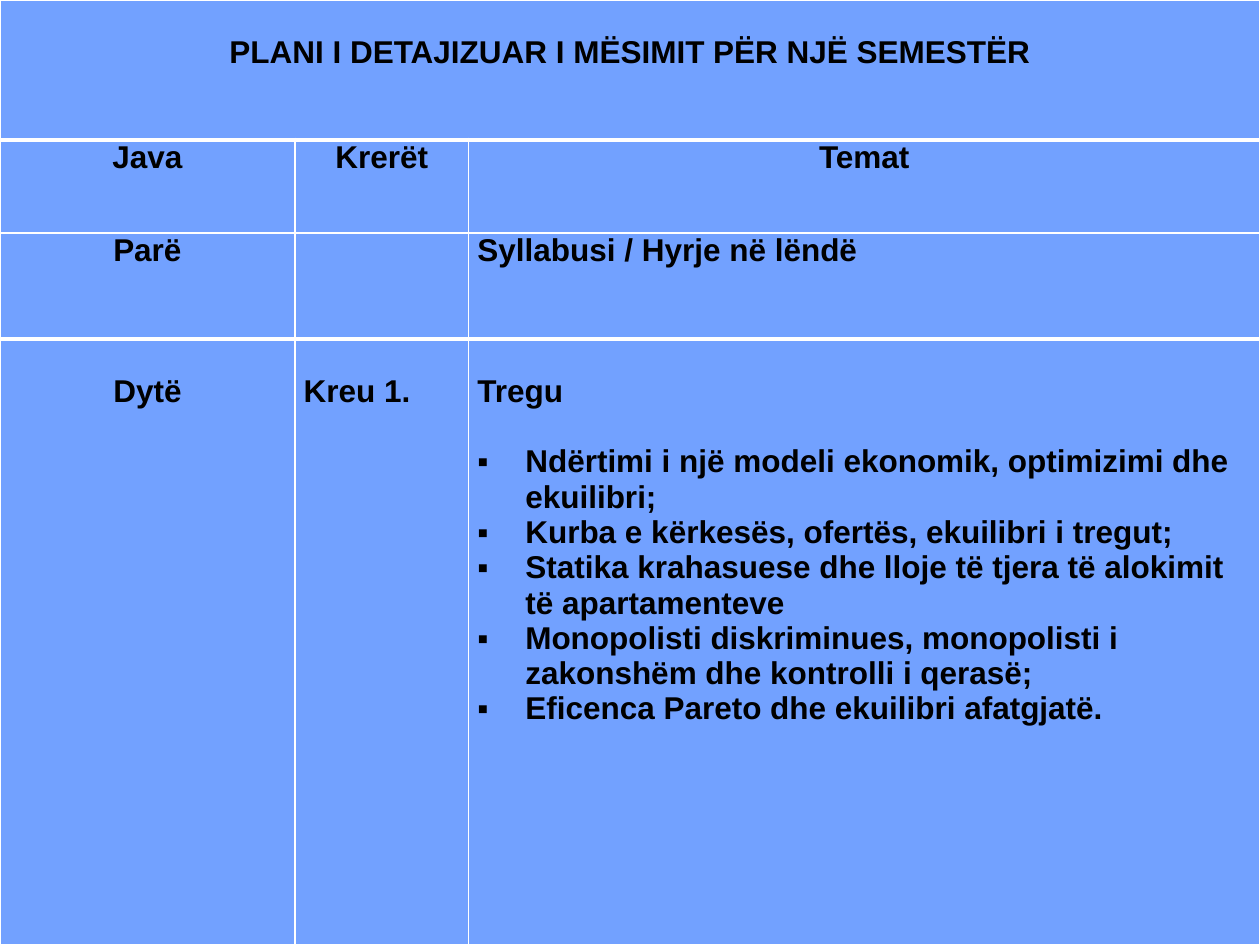
from dataclasses import dataclass

from lxml import etree
from pptx import Presentation, util as u
from pptx.dml.color import RGBColor
from pptx.enum import text
from pptx.oxml import ns

MID = text.PP_ALIGN.CENTER
LEFT = text.PP_ALIGN.LEFT
JUST = text.PP_ALIGN.JUSTIFY
COLS = (2.34, 1.38, 6.28)
ROWS = (1.11, 0.74, 0.84, 4.81)
LINE = 0.28
THIN, THICK = 1, 3


@dataclass
class Entry:
    row: int
    col: int
    lines: tuple[str, ...]
    align: text.PP_ALIGN = MID
    top: float = 0


ENTRIES = (
    Entry(0, 0, ("PLANI I DETAJIZUAR I MËSIMIT PËR NJË SEMESTËR",), top=LINE),
    Entry(1, 0, ("Java",)),
    Entry(1, 1, ("Krerët",)),
    Entry(1, 2, ("Temat",)),
    Entry(2, 0, ("Parë",)),
    Entry(2, 2, ("Syllabusi / Hyrje në lëndë",), JUST),
    Entry(3, 0, ("Dytë",), top=LINE),
    Entry(3, 1, ("Kreu 1.",), LEFT, LINE),
    Entry(3, 2, (
        "Tregu",
        "Ndërtimi i një modeli ekonomik, optimizimi dhe ekuilibri;",
        "Kurba e kërkesës, ofertës, ekuilibri i tregut;",
        "Statika krahasuese dhe lloje të tjera të alokimit të apartamenteve",
        "Monopolisti diskriminues, monopolisti i zakonshëm dhe kontrolli i qerasë;",
        "Eficenca Pareto dhe ekuilibri afatgjatë.",
    ), LEFT, LINE),
)


def paint(fill, color: str) -> None:
    fill.solid()
    fill.fore_color.rgb = RGBColor.from_string(color)


def edge(cell, sides: dict[str, int]) -> None:
    props = cell._tc.get_or_add_tcPr()
    for spot, (side, width) in enumerate(sides.items()):
        line = etree.Element(ns.qn(f"a:ln{side}"), w=str(u.Pt(width)))
        fill = etree.SubElement(line, ns.qn("a:solidFill"))
        etree.SubElement(fill, ns.qn("a:srgbClr"), val="FFFFFF")
        props.insert(spot, line)


def bullet(para) -> None:
    props = para._p.get_or_add_pPr()
    props.set("marL", str(u.Inches(0.38)))
    props.set("indent", str(-u.Inches(0.38)))
    etree.SubElement(props, ns.qn("a:buFont"), typeface="Arial")
    etree.SubElement(props, ns.qn("a:buChar"), char="▪")


def write(cell, entry: Entry) -> None:
    cell.margin_top = u.Inches(entry.top)
    frame = cell.text_frame
    frame.text = "\n".join(entry.lines)
    for spot, para in enumerate(frame.paragraphs):
        para.alignment = entry.align
        if spot:
            bullet(para)
        elif len(entry.lines) > 1:
            para.space_after = u.Pt(20)
        for run in para.runs:
            run.font.name = "Arial"
            run.font.size = u.Pt(18)
            run.font.bold = True
            run.font.color.rgb = RGBColor.from_string("000000")


def main() -> None:
    deck = Presentation()
    deck.slide_width, deck.slide_height = u.Inches(10), u.Inches(7.5)
    slide = deck.slides.add_slide(deck.slide_layouts[6])
    paint(slide.background.fill, "00349E")
    table = slide.shapes.add_table(
        len(ROWS), len(COLS), 0, 0, u.Inches(10), u.Inches(7.5)
    ).table
    table.first_row = table.horz_banding = False
    for col, width in zip(table.columns, COLS):
        col.width = u.Inches(width)
    for row, height in zip(table.rows, ROWS):
        row.height = u.Inches(height)
    table.cell(0, 0).merge(table.cell(0, 2))
    for index, row in enumerate(table.rows):
        for cell in row.cells:
            cell.margin_left = cell.margin_right = u.Inches(0.07)
            cell.margin_top = cell.margin_bottom = 0
            paint(cell.fill, "72A1FF")
            edge(cell, {
                "L": THIN,
                "R": THIN,
                "T": THICK if index in (1, 3) else THIN,
                "B": THICK if index in (0, 2) else THIN,
            })
    for entry in ENTRIES:
        write(table.cell(entry.row, entry.col), entry)
    deck.save("out.pptx")


if __name__ == "__main__":
    main()
